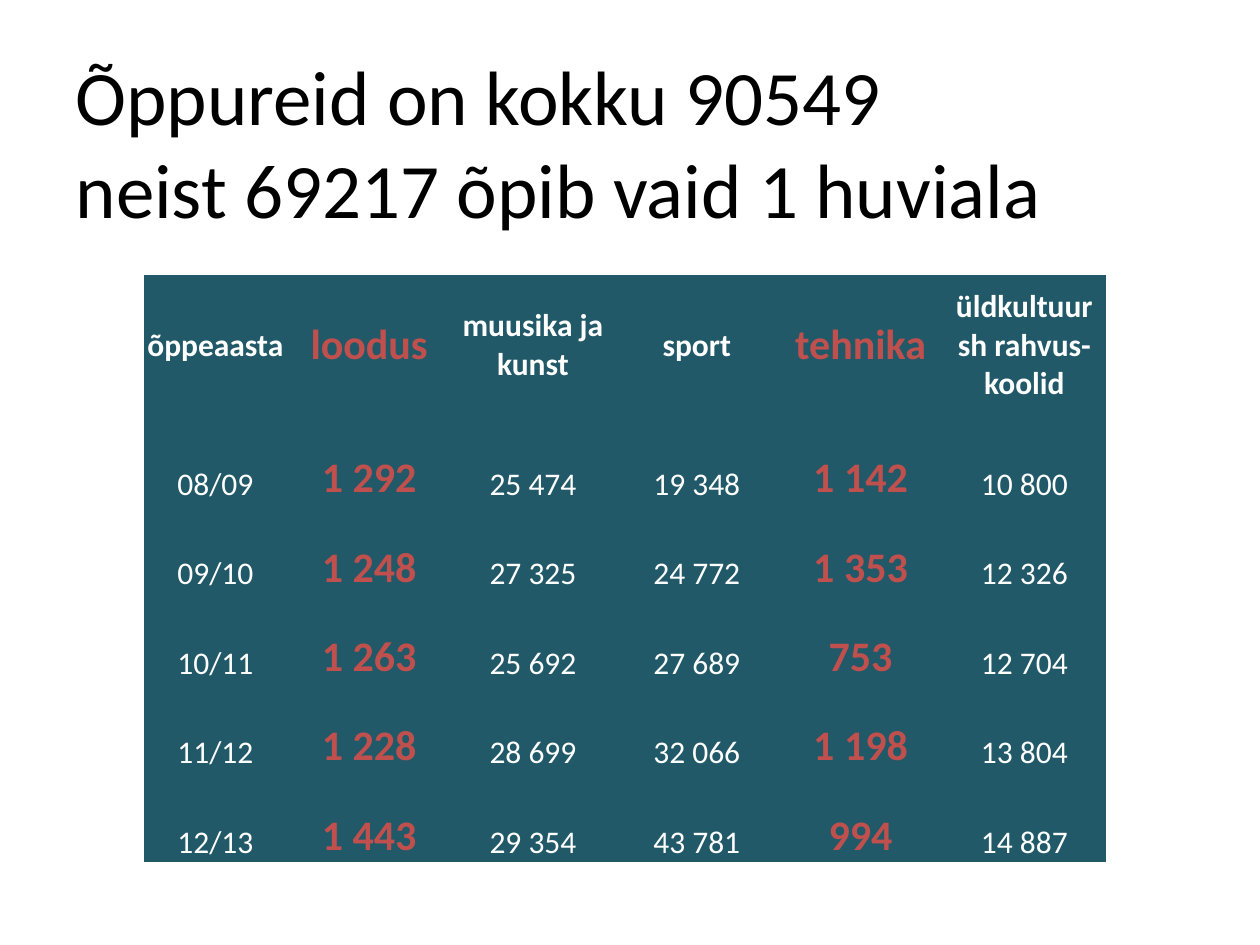
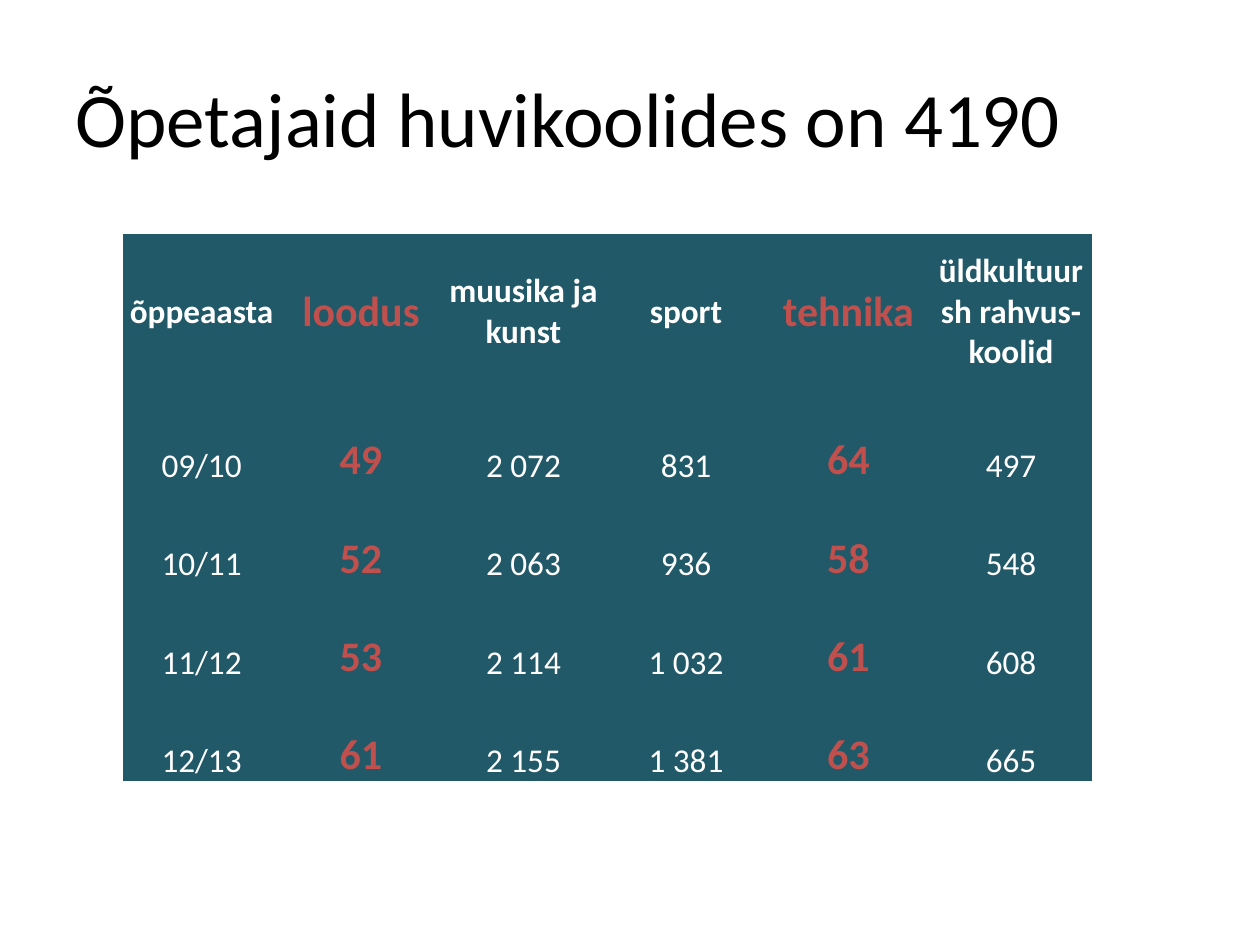
from pptx import Presentation
from pptx.dml.color import RGBColor
from pptx.enum.text import MSO_ANCHOR as Anchor, MSO_AUTO_SIZE as AutoSize, PP_ALIGN as Align
from pptx.oxml.ns import qn
from pptx.util import Inches, Pt

HEADINGS = ["õppeaasta", "loodus", "muusika ja kunst", "sport", "tehnika",
            "üldkultuur sh rahvus-koolid"]
HIGHLIGHTED = {"loodus", "tehnika"}

SLIDES = [
    {
        "title": ["Õppureid on kokku 90549", "neist 69217 õpib vaid 1 huviala"],
        "title_height": 1.64,
        "corner": (1.14, 2.18),
        "year_width": 1.14, "field_width": 1.3,
        "heading_height": 1.11, "year_height": 0.71,
        "text_size": 18,
        "years": [
            ["08/09", "1 292", "25 474", "19 348", "1 142", "10 800"],
            ["09/10", "1 248", "27 325", "24 772", "1 353", "12 326"],
            ["10/11", "1 263", "25 692", "27 689", "753", "12 704"],
            ["11/12", "1 228", "28 699", "32 066", "1 198", "13 804"],
            ["12/13", "1 443", "29 354", "43 781", "994", "14 887"],
        ],
    },
    {
        "title": ["Õpetajaid huvikoolides on 4190"],
        "title_height": 1.25,
        "corner": (0.98, 1.86),
        "year_width": 1.24, "field_width": 1.29,
        "heading_height": 1.22, "year_height": 0.78,
        "text_size": 19,
        "years": [
            ["09/10", "49", "2 072", "831", "64", "497"],
            ["10/11", "52", "2 063", "936", "58", "548"],
            ["11/12", "53", "2 114", "1 032", "61", "608"],
            ["12/13", "61", "2 155", "1 381", "63", "665"],
        ],
    },
]

FONT = "Calibri"
COLOURS = {"title": "000000", "cell": "215968", "text": "FFFFFF", "highlight": "C0504D"}
TITLE_SIZE, HIGHLIGHT_SIZE = 44, 24
PLAIN_TABLE_STYLE = "{2D5ABB26-0587-4C30-8999-92F81FD0307C}"
TITLE_FRAME = {"vertical_anchor": Anchor.MIDDLE, "word_wrap": True,
               "auto_size": AutoSize.NONE}
CELL_MARGINS = {"margin_left": Inches(0.01), "margin_right": Inches(0.01),
                "margin_top": Inches(0.01), "margin_bottom": 0}


def colour(name):
    return RGBColor.from_string(COLOURS[name])


def set_format(target, values):
    for name, value in values.items():
        setattr(target, name, value)


def add_span(para, text, size, colour_name, bold=False):
    span = para.add_run()
    span.text = text
    set_format(span.font, {"name": FONT, "size": Pt(size), "bold": bold})
    span.font.color.rgb = colour(colour_name)


def write_title(page, lines, height):
    title = page.shapes.title
    set_format(title, {"left": Inches(0.5), "top": Inches(0.3),
                       "width": Inches(9), "height": Inches(height)})
    set_format(title.text_frame, TITLE_FRAME)
    para = title.text_frame.paragraphs[0]
    para.alignment = Align.LEFT
    for index, line in enumerate(lines):
        if index:
            para.add_line_break()
        add_span(para, line, TITLE_SIZE, "title")


def write_cell(cell, text, text_size, is_heading, is_highlighted):
    cell.fill.solid()
    cell.fill.fore_color.rgb = colour("cell")
    set_format(cell, CELL_MARGINS)
    cell.vertical_anchor = Anchor.MIDDLE if is_heading else Anchor.BOTTOM
    para = cell.text_frame.paragraphs[0]
    para.alignment = Align.CENTER
    add_span(para, text, HIGHLIGHT_SIZE if is_highlighted else text_size,
             "highlight" if is_highlighted else "text", is_heading or is_highlighted)


def add_year_table(page, content):
    rows = [HEADINGS] + content["years"]
    widths = [content["year_width"]] + [content["field_width"]] * (len(HEADINGS) - 1)
    heights = [content["heading_height"]] + [content["year_height"]] * len(content["years"])
    left, top = content["corner"]
    frame = page.shapes.add_table(len(rows), len(HEADINGS), Inches(left), Inches(top),
                                  Inches(sum(widths)), Inches(sum(heights)))
    table = frame.table
    set_format(table, {"first_row": False, "horz_banding": False})
    for style in frame.element.iter(qn("a:tableStyleId")):
        style.text = PLAIN_TABLE_STYLE
    for column, width in zip(table.columns, widths):
        column.width = Inches(width)
    for row_index, (row, height) in enumerate(zip(table.rows, heights)):
        row.height = Inches(height)
        for cell, text, heading in zip(row.cells, rows[row_index], HEADINGS):
            write_cell(cell, text, content["text_size"], row_index == 0,
                       heading in HIGHLIGHTED)


def main():
    deck = Presentation()
    set_format(deck, {"slide_width": Inches(10), "slide_height": Inches(7.5)})
    title_only = deck.slide_layouts.get_by_name("Title Only")
    for content in SLIDES:
        page = deck.slides.add_slide(title_only)
        write_title(page, content["title"], content["title_height"])
        add_year_table(page, content)
    deck.save("out.pptx")


if __name__ == "__main__":
    main()
